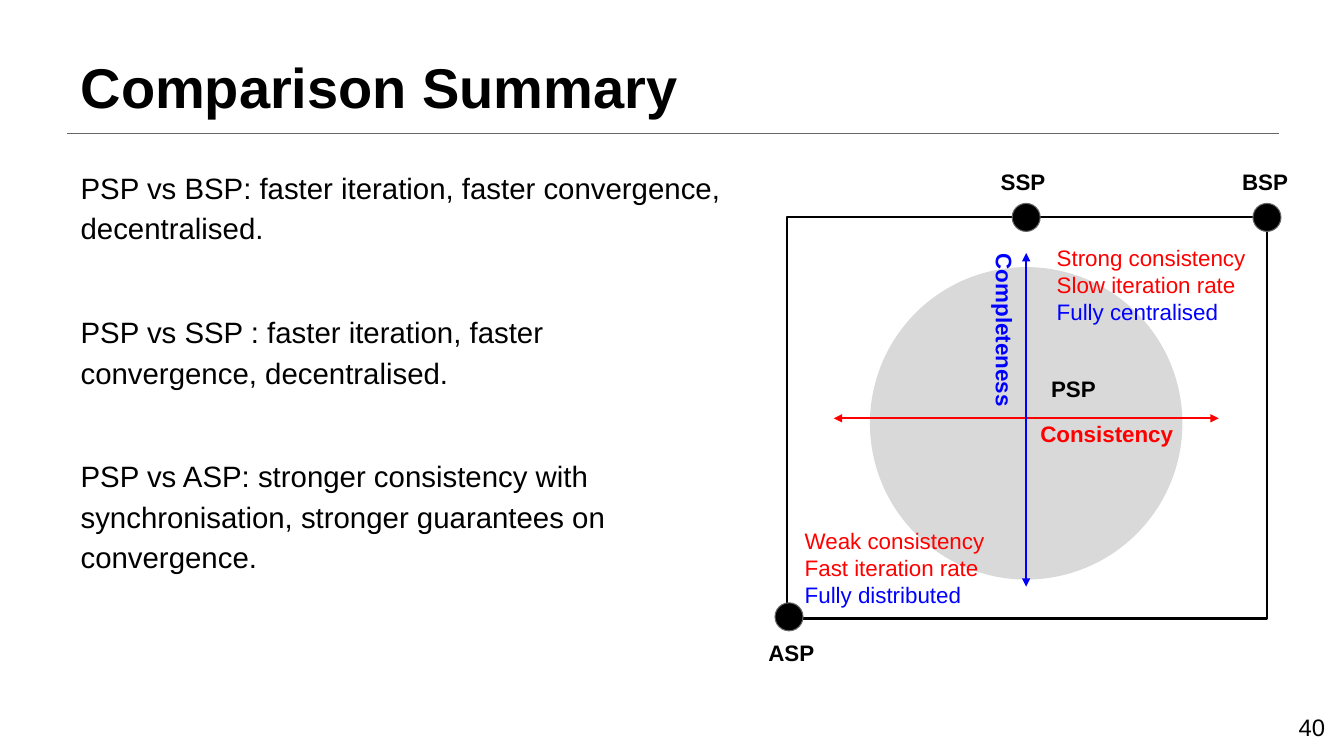
from lxml import etree
from pptx import Presentation
from pptx.dml.color import RGBColor
from pptx.enum import shapes as kinds, text as txt
from pptx.oxml.ns import qn
from pptx.util import Pt

BLACK = RGBColor(0x00, 0x00, 0x00)
GREY = RGBColor(0x66, 0x66, 0x66)
LIGHT = RGBColor(0xD9, 0xD9, 0xD9)
RED = RGBColor(0xFF, 0x00, 0x00)
BLUE = RGBColor(0x00, 0x00, 0xFF)
LEFT, CENTER, RIGHT = txt.PP_ALIGN.LEFT, txt.PP_ALIGN.CENTER, txt.PP_ALIGN.RIGHT
TOP, MIDDLE, BOTTOM = txt.MSO_ANCHOR.TOP, txt.MSO_ANCHOR.MIDDLE, txt.MSO_ANCHOR.BOTTOM

deck = Presentation()
deck.slide_width, deck.slide_height = Pt(960), Pt(540)
slide = deck.slides.add_slide(deck.slide_layouts[5])


def write(holder, lines, size, bold=False, align=LEFT, anchor=TOP, wrap=True):
    """Fill a holder with one paragraph per (wording, colour) pair."""
    frame = holder.text_frame
    frame.auto_size = txt.MSO_AUTO_SIZE.NONE
    frame.word_wrap = wrap
    frame.vertical_anchor = anchor
    frame.margin_left = frame.margin_right = Pt(9.6)
    frame.margin_top = frame.margin_bottom = Pt(9.6)
    for i, (wording, colour) in enumerate(lines):
        paragraph = frame.add_paragraph() if i else frame.paragraphs[0]
        paragraph.alignment = align
        run = paragraph.add_run()
        run.text = wording
        run.font.name, run.font.size, run.font.bold = "Arial", Pt(size), bold
        run.font.color.rgb = colour
    return frame


def draw_line(x1, y1, x2, y2, colour, width, arrows=()):
    line = slide.shapes.add_connector(
        kinds.MSO_CONNECTOR.STRAIGHT, Pt(x1), Pt(y1), Pt(x2), Pt(y2))
    line.line.color.rgb, line.line.width = colour, Pt(width)
    outline = line.line._get_or_add_ln()
    for end in arrows:
        etree.SubElement(outline, qn(f"a:{end}"), type="triangle")
    etree.SubElement(line._element.spPr, qn("a:effectLst"))


# Title and rule
title = slide.shapes.title
title.left, title.top, title.width, title.height = Pt(48), Pt(21.6), Pt(864), Pt(73.4)
write(title, [("Comparison Summary", BLACK)], 40, bold=True, anchor=BOTTOM)
draw_line(48, 95.5, 913.7, 95.5, GREY, 0.75)

# Comparisons on the left
comparisons = write(
    slide.shapes.add_textbox(Pt(48), Pt(108), Pt(479.5), Pt(403)),
    [("PSP vs BSP: faster iteration, faster convergence, decentralised.", BLACK),
     ("PSP vs SSP : faster iteration, faster convergence, decentralised.", BLACK),
     ("PSP vs ASP: stronger consistency with synchronisation, "
      "stronger guarantees on convergence.", BLACK)], 21)
for i, paragraph in enumerate(comparisons.paragraphs):
    paragraph.line_spacing = 1.15
    paragraph.space_before = Pt(45 if i else 8)

# Page number
write(slide.shapes.add_textbox(Pt(898.6), Pt(499), Pt(57.6), Pt(41)),
      [("40", BLACK)], 17, align=RIGHT, anchor=MIDDLE)

# Design space frame and the PSP region
frame_box = slide.shapes.add_shape(
    kinds.MSO_SHAPE.RECTANGLE, Pt(562.3), Pt(154.8), Pt(342.7), Pt(287))
frame_box.shadow.inherit = False
frame_box.fill.background()
frame_box.line.color.rgb, frame_box.line.width = BLACK, Pt(1.5)

region = slide.shapes.add_shape(
    kinds.MSO_SHAPE.OVAL, Pt(621.4), Pt(190.8), Pt(223.2), Pt(223.2))
region.shadow.inherit = False
region.fill.solid()
region.fill.fore_color.rgb = LIGHT
region.line.fill.background()

# Corner traits
for left, top, traits in [
    (745.2, 164.9, ("Strong consistency", "Slow iteration rate", "Fully centralised")),
    (565.2, 367.2, ("Weak consistency", "Fast iteration rate", "Fully distributed")),
]:
    write(slide.shapes.add_textbox(Pt(left), Pt(top), Pt(171.4), Pt(73.4)),
          list(zip(traits, (RED, RED, BLUE))), 16)

# Method dots, by centre
DOT = 20
for x, y in [(905, 155.3), (733, 155.3), (563.6, 440.6)]:
    dot = slide.shapes.add_shape(
        kinds.MSO_SHAPE.OVAL, Pt(x - DOT / 2), Pt(y - DOT / 2), Pt(DOT), Pt(DOT))
    dot.shadow.inherit = False
    dot.fill.solid()
    dot.fill.fore_color.rgb = BLACK
    dot.line.color.rgb, dot.line.width = GREY, Pt(0.75)

# Axes
both_ends = ("headEnd", "tailEnd")
draw_line(595.6, 298.8, 870.6, 298.8, RED, 1.5, both_ends)
draw_line(733, 419, 733, 180.7, BLUE, 1.5, both_ends)

# Method and axis labels
for wording, left, top, width, height, colour, turn in [
    ("BSP", 874.8, 119.5, 57.6, 20, BLACK, 0),
    ("SSP", 702, 119.5, 57.6, 20, BLACK, 0),
    ("ASP", 536.4, 455.8, 57.6, 20, BLACK, 0),
    ("PSP", 738, 267.8, 57.6, 20, BLACK, 0),
    ("Consistency", 733, 290.2, 115.2, 39, RED, 0),
    ("Completeness", 648.7, 219.6, 138.2, 32.4, BLUE, 90),
]:
    label = slide.shapes.add_textbox(Pt(left), Pt(top), Pt(width), Pt(height))
    label.rotation = turn
    write(label, [(wording, colour)], 16, bold=True, align=CENTER, anchor=MIDDLE, wrap=False)

deck.save("out.pptx")
